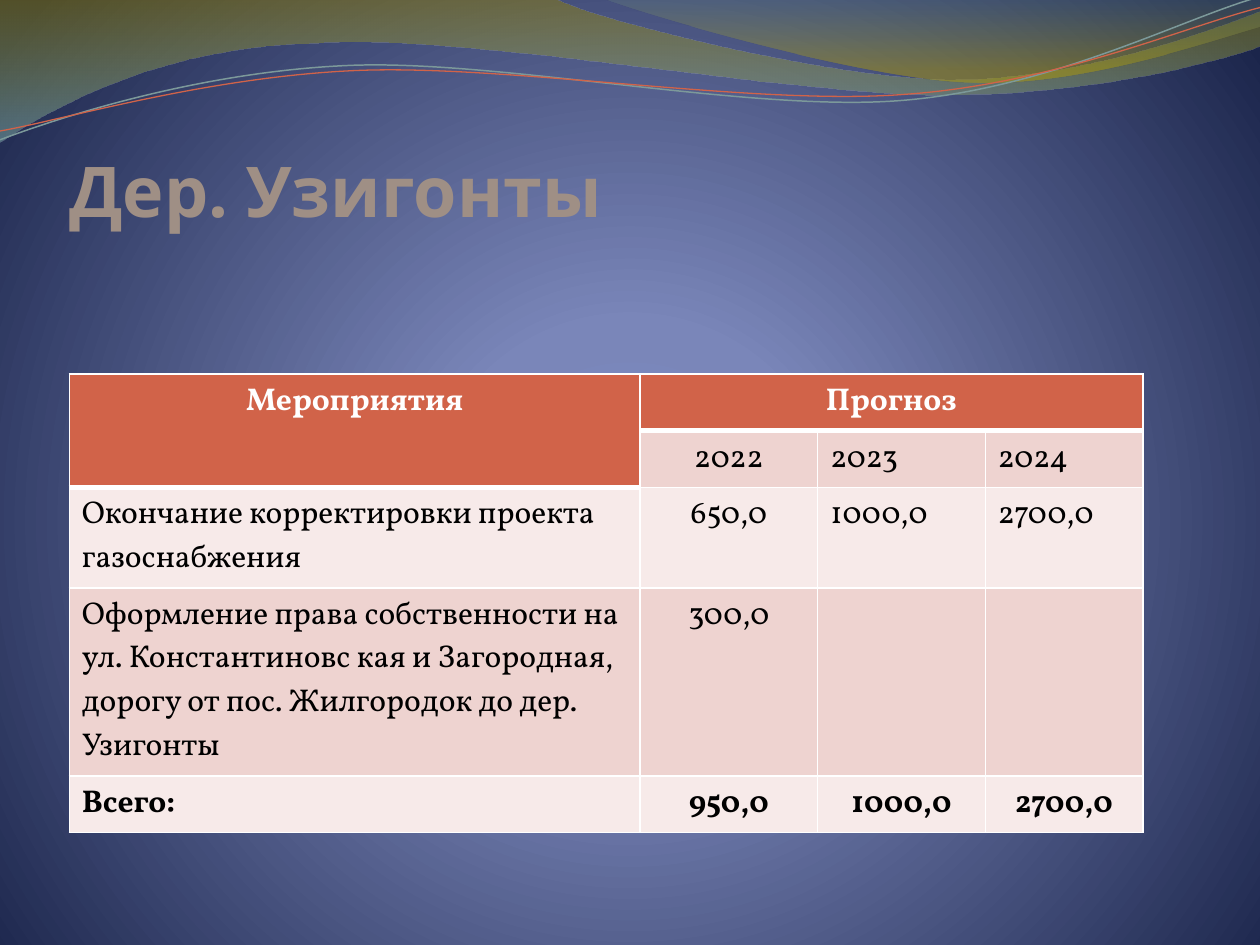
"""Builds the slide with the gas supply cost forecast for Uzigonty."""
from dataclasses import dataclass

from lxml import etree
from pptx import Presentation
from pptx import util as u
from pptx.dml.color import RGBColor
from pptx.enum import text
from pptx.oxml import ns


@dataclass(frozen=True)
class Theme:
    title_font: str = "Open Sans"
    body_font: str = "Vollkorn"
    title_size: int = 40
    body_size: int = 18
    title: str = "9F8F85"
    header: str = "D16349"
    band: str = "EED3D0"
    light: str = "F7EAE9"
    white: str = "FFFFFF"
    black: str = "000000"
    sage: str = "7C999A"
    backdrop: tuple = ((0, "7A88C3", 100), (25, "7A86B9", 100), (100, "1B254B", 100))
    wide_wave: tuple = ((0, "978500", 45), (100, "77A5A6", 55))
    right_wave: tuple = ((0, "648484", 30), (80, "B49F00", 45))


def apply_gradient(parent, stops, direction):
    """Replaces the solid fill inside parent with a gradient."""
    marks = "".join(
        f'<a:gs pos="{place * 1000}"><a:srgbClr val="{color}">'
        f'<a:alpha val="{alpha * 1000}"/></a:srgbClr></a:gs>'
        for place, color, alpha in stops)
    solid = parent.find(ns.qn("a:solidFill"))
    parent.replace(solid, etree.fromstring(
        f'<a:gradFill {ns.nsdecls("a")} rotWithShape="1"><a:gsLst>{marks}</a:gsLst>{direction}</a:gradFill>'))


def draw_curve(page, start, segments, closed):
    """Draws a freeform of straight lines (x, y) and cubic curves (six numbers)."""
    points = [segment[i:i + 2] for segment in segments for i in range(0, len(segment), 2)]
    builder = page.shapes.build_freeform(u.Inches(start[0]), u.Inches(start[1]))
    builder.add_line_segments([(u.Inches(x), u.Inches(y)) for x, y in points], close=closed)
    shape = builder.convert_to_shape()
    shape.shadow.inherit = False
    outline = shape.element.find(".//" + ns.qn("a:path"))
    lines = iter(outline.findall(ns.qn("a:lnTo")))
    for segment in segments:
        first = next(lines)
        if len(segment) == 6:
            curve = etree.Element(ns.qn("a:cubicBezTo"))
            first.addprevious(curve)
            for line in (first, next(lines), next(lines)):
                curve.append(line[0])
                outline.remove(line)
    return shape


theme = Theme()
deck = Presentation()
deck.slide_width, deck.slide_height = u.Inches(10), u.Inches(7.5)
page = deck.slides.add_slide(deck.slide_layouts[5])

page.background.fill.solid()
apply_gradient(
    page.element.find(".//" + ns.qn("p:bgPr")), theme.backdrop,
    '<a:path path="circle"><a:fillToRect l="10000" t="110000" r="10000" b="100000"/></a:path>')

waves = [
    (theme.wide_wave, (0, 0), [
        (4.4, -0.01), (4.76, 0.17, 6.64, 0.63, 7.58, 0.63), (8.53, 0.63, 9.58, 0.26, 10, 0.09),
        (10.01, 0.36), (9.83, 0.44, 8.7, 0.76, 7.46, 0.75), (6.22, 0.75, 3.82, 0.28, 2.57, 0.34),
        (1.29, 0.36, 0.46, 0.83, -0.01, 1.13)]),
    (theme.right_wave, (4.79, -0.01), [
        (5.09, 0.11, 6.82, 0.62, 7.69, 0.65), (8.56, 0.69, 9.61, 0.32, 10, 0.21), (10, 0)]),
]
for stops, start, segments in waves:
    wave = draw_curve(page, start, segments, True)
    wave.fill.solid()
    apply_gradient(wave.element.spPr, stops, '<a:lin ang="5400000" scaled="0"/>')
    wave.line.fill.background()

strands = [
    (theme.sage, 0.85, (0, 1.11), [
        (0.48, 0.93, 1.58, 0.57, 2.77, 0.52), (3.95, 0.47, 5.93, 0.89, 7.13, 0.8),
        (8.33, 0.71, 9.38, 0.15, 9.98, -0.02)]),
    (theme.header, 0.75, (0, 1.04), [
        (0.47, 0.96, 1.64, 0.61, 2.83, 0.56), (4.03, 0.51, 5.97, 0.84, 7.17, 0.75),
        (8.36, 0.67, 9.41, 0.21, 10, 0.06)]),
]
for color, width, start, segments in strands:
    strand = draw_curve(page, start, segments, False)
    strand.fill.background()
    strand.line.color.rgb = RGBColor.from_string(color)
    strand.line.width = u.Pt(width)

title = page.shapes.title
title.left, title.top = u.Inches(0.55), u.Inches(0.78)
title.width, title.height = u.Inches(8.5), u.Inches(1.06)
box = title.text_frame
box.text = "Дер. Узигонты"
box.auto_size = text.MSO_AUTO_SIZE.NONE
box.vertical_anchor = text.MSO_ANCHOR.BOTTOM
box.margin_left = box.margin_right = box.margin_top = box.margin_bottom = 0
para = box.paragraphs[0]
para.alignment = text.PP_ALIGN.LEFT
para.font.name, para.font.size, para.font.bold = theme.title_font, u.Pt(theme.title_size), True
para.font.color.rgb = RGBColor.from_string(theme.title)

rows = [
    ("Мероприятия", "Прогноз", "", ""),
    ("", "2022", "2023", "2024"),
    ("Окончание корректировки проекта газоснабжения", "650,0", "1000,0", "2700,0"),
    ("Оформление права собственности на ул. Константиновс кая и Загородная, "
     "дорогу от пос. Жилгородок до дер. Узигонты", "300,0", "", ""),
    ("Всего:", "950,0", "1000,0", "2700,0"),
]
column_widths = (4.53, 1.41, 1.33, 1.25)
total_row = len(rows) - 1
frame = page.shapes.add_table(
    len(rows), len(column_widths), u.Inches(0.55), u.Inches(2.97),
    u.Inches(sum(column_widths)), u.Inches(0.41 * len(rows)))
table = frame.table
for column, width in zip(table.columns, column_widths):
    column.width = u.Inches(width)
frame.height = u.Inches(2.92)
table.cell(0, 0).merge(table.cell(1, 0))
table.cell(0, 1).merge(table.cell(0, 3))

for r, row in enumerate(rows):
    for c, words in enumerate(row):
        cell = table.cell(r, c)
        heading = r == 0 or (r, c) == (1, 0)
        below_heading = (r == 1 and c > 0) or (r, c) == (2, 0)
        borders = {"L": 1, "R": 1, "T": 3 if below_heading else 1, "B": 3 if heading else 1}
        for side, width in borders.items():
            cell._tc.get_or_add_tcPr().append(etree.fromstring(
                f'<a:ln{side} {ns.nsdecls("a")} w="{u.Pt(width)}"><a:solidFill>'
                f'<a:srgbClr val="{theme.white}"/></a:solidFill></a:ln{side}>'))
        cell.fill.solid()
        fill = theme.header if heading else theme.band if r % 2 else theme.light
        cell.fill.fore_color.rgb = RGBColor.from_string(fill)
        para = cell.text_frame.paragraphs[0]
        if words:
            para.text = words
        centred = heading or c == 1 or (r == total_row and c > 0)
        para.alignment = text.PP_ALIGN.CENTER if centred else text.PP_ALIGN.LEFT
        para.font.name, para.font.size = theme.body_font, u.Pt(theme.body_size)
        para.font.bold = heading or r == total_row
        para.font.color.rgb = RGBColor.from_string(theme.white if heading else theme.black)

deck.save("out.pptx")
